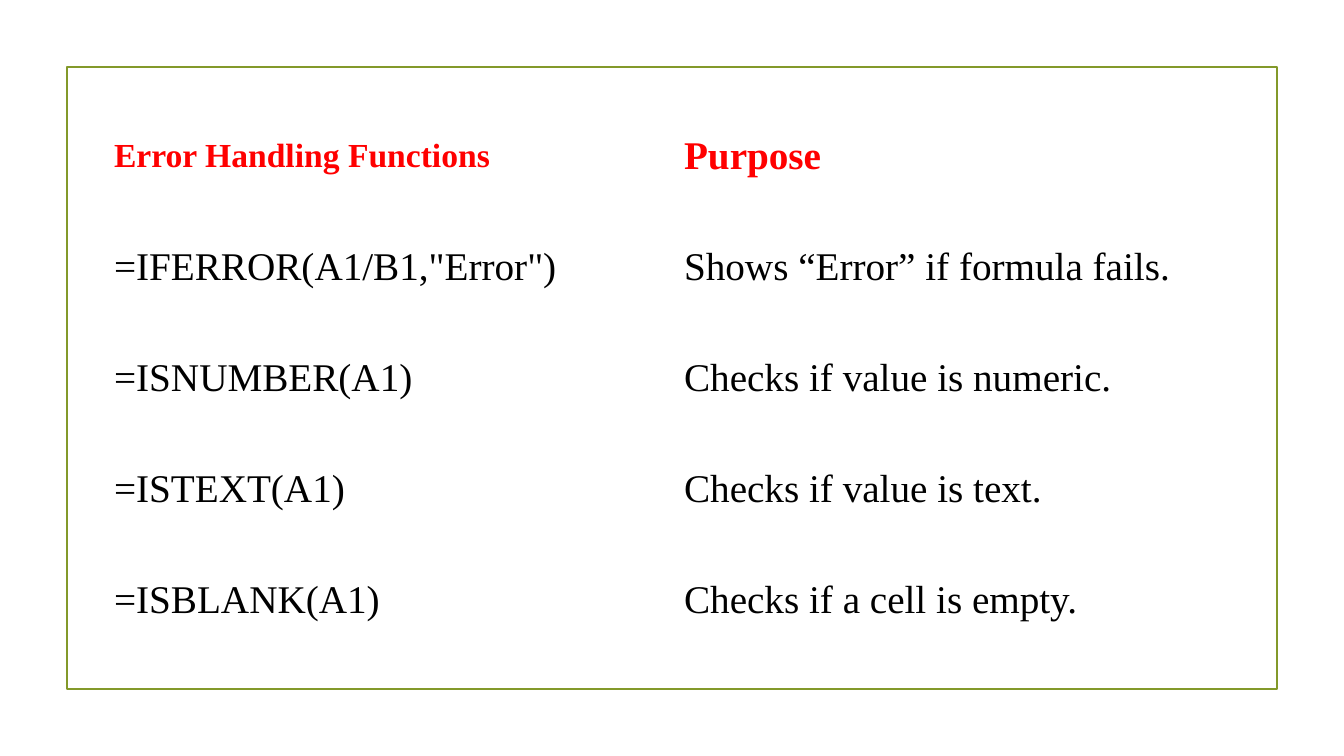
import pptx
import pptx.dml.color
import pptx.enum.shapes
import pptx.enum.text
import pptx.oxml.ns
import pptx.util

EMU_PER_PX = 914400 / 100.8
FONT = "Times New Roman"
RED, BLACK, OLIVE = "FF0000", "000000", "83992A"
NO_STYLE_NO_GRID = "{2D5ABB26-0587-4C30-8999-92F81FD0307C}"
COLUMN_WIDTH, ROW_HEIGHT = 570, 111

HEADINGS = [("Error Handling Functions", 24), ("Purpose", 28)]
FUNCTIONS = [
    ('=IFERROR(A1/B1,"Error")', "Shows “Error” if formula fails."),
    ("=ISNUMBER(A1)", "Checks if value is numeric."),
    ("=ISTEXT(A1)", "Checks if value is text."),
    ("=ISBLANK(A1)", "Checks if a cell is empty."),
]


def px(length):
    return pptx.util.Emu(round(length * EMU_PER_PX))


def color(hex_string):
    return pptx.dml.color.RGBColor.from_string(hex_string)


def add_frame(slide, left, top, width, height):
    shape = slide.shapes.add_shape(
        pptx.enum.shapes.MSO_SHAPE.RECTANGLE, px(left), px(top), px(width), px(height))
    shape.shadow.inherit = False
    shape.fill.background()
    shape.line.color.rgb = color(OLIVE)
    shape.line.width = pptx.util.Pt(1.25)


def write_cell(cell, text, size, text_color, bold):
    cell.fill.background()
    cell.vertical_anchor = pptx.enum.text.MSO_ANCHOR.MIDDLE
    run = cell.text_frame.paragraphs[0].add_run()
    run.text = text
    run.font.name = FONT
    run.font.size = pptx.util.Pt(size)
    run.font.bold = bold
    run.font.color.rgb = color(text_color)


def add_function_table(slide, left, top):
    row_count, column_count = len(FUNCTIONS) + 1, len(HEADINGS)
    graphic_frame = slide.shapes.add_table(
        row_count, column_count, px(left), px(top),
        px(COLUMN_WIDTH * column_count), px(ROW_HEIGHT * row_count))
    table = graphic_frame.table
    table.horz_banding = False
    for style_id in graphic_frame.element.iter(pptx.oxml.ns.qn("a:tableStyleId")):
        style_id.text = NO_STYLE_NO_GRID
    for column, (heading, size) in enumerate(HEADINGS):
        write_cell(table.cell(0, column), heading, size, RED, True)
    for row, texts in enumerate(FUNCTIONS, start=1):
        for column, text in enumerate(texts):
            write_cell(table.cell(row, column), text, 28, BLACK, False)


def main():
    presentation = pptx.Presentation()
    presentation.slide_width = px(1344)
    presentation.slide_height = px(756)
    slide = presentation.slides.add_slide(presentation.slide_layouts[6])
    add_frame(slide, 67, 67, 1210, 622)
    add_function_table(slide, 104, 101)
    presentation.save("out.pptx")


if __name__ == "__main__":
    main()
